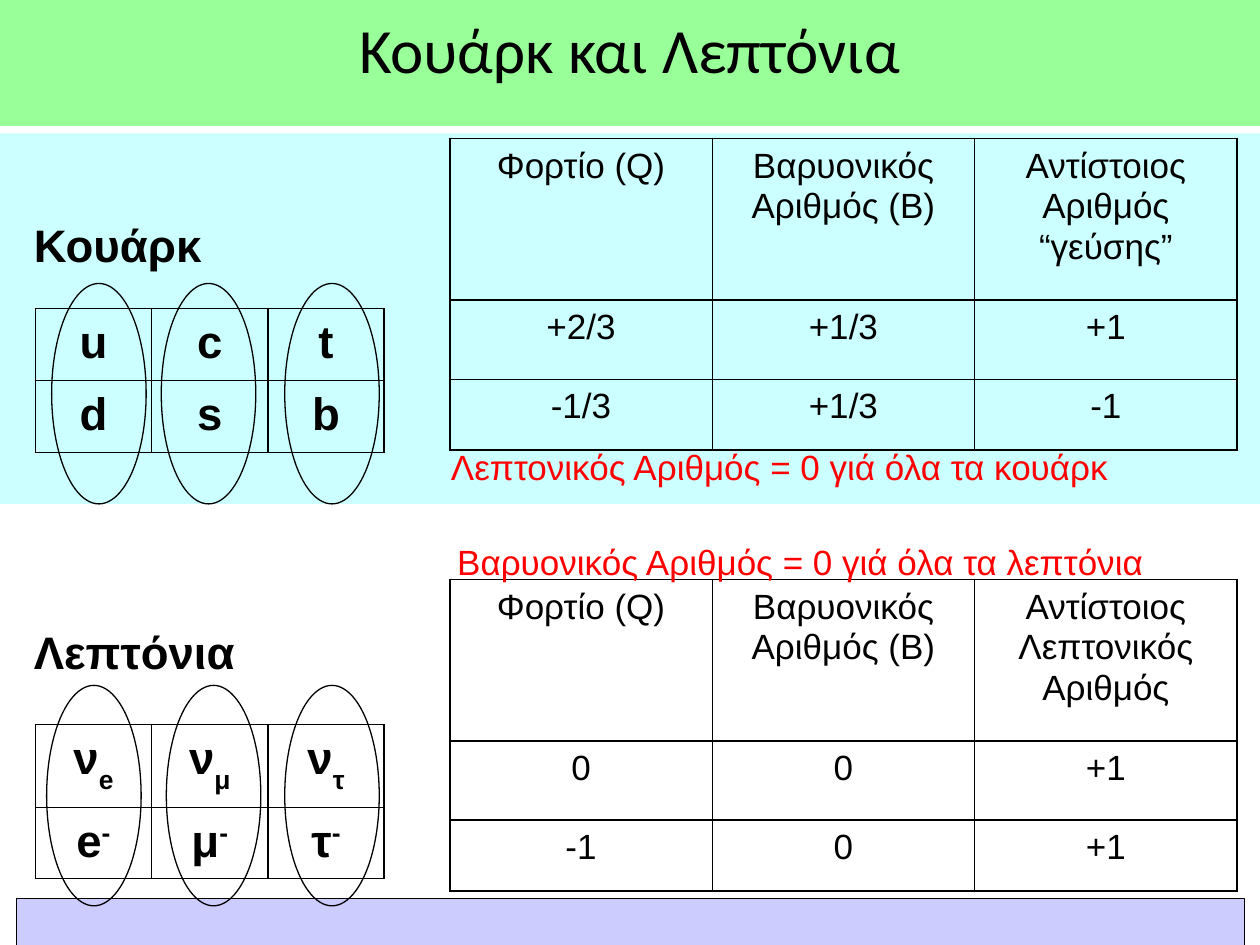
from lxml import etree
from pptx import Presentation
from pptx.dml.color import RGBColor
from pptx.enum.shapes import MSO_SHAPE
from pptx.enum.text import MSO_ANCHOR, MSO_AUTO_SIZE, PP_ALIGN
from pptx.oxml.ns import qn
from pptx.util import Inches, Pt

RECTANGLE, ELLIPSE = MSO_SHAPE.RECTANGLE, MSO_SHAPE.OVAL
CENTER, LEFT, TOP = PP_ALIGN.CENTER, PP_ALIGN.LEFT, MSO_ANCHOR.TOP
NO_AUTOFIT = MSO_AUTO_SIZE.NONE
TITLE_ONLY = 5

SLIDE_W, SLIDE_H = Inches(10), Inches(7.5)
BLACK, RED = "000000", "FF0000"
GREEN, CYAN, LAVENDER = "99FF99", "CCFFFF", "CCCCFF"

TITLE_FONT = {"name": "Calibri", "size": Pt(36), "bold": False}
HEADING_FONT = {"name": "Arial", "size": Pt(26), "bold": True}
BODY_FONT = {"name": "Arial", "size": Pt(20), "bold": False}
BASELINES = {"_": "-33000", "^": "33000"}

# All lengths are percentages of the slide's width or height.
PARTICLE_LEFT, PARTICLE_COLUMNS = 2.8, [9.23] * 3
NUMBER_LEFT, NUMBER_COLUMNS = 35.7, [20.83] * 3
NUMBER_ROWS = [17.07, 8.4, 7.47]
FAMILIES = [
    {
        "heading": "Κουάρκ", "heading_top": 22.27,
        "particles": [["u", "c", "t"], ["d", "s", "b"]],
        "particles_top": 32.67, "particle_rows": [7.6, 7.6],
        "numbers": [["Φορτίο (Q)", "Βαρυονικός Αριθμός (Β)", "Αντίστοιος Αριθμός “γεύσης”"],
                    ["+2/3", "+1/3", "+1"],
                    ["-1/3", "+1/3", "-1"]],
        "numbers_top": 14.67,
        "note": "Λεπτονικός Αριθμός = 0 γιά όλα τα κουάρκ", "note_at": (34.8, 46.53),
        "generations": [4.1, 12.8, 22.6], "generations_top": 30,
    },
    {
        "heading": "Λεπτόνια", "heading_top": 65.33,
        "particles": [["ν_e", "ν_μ", "ν_τ"], ["e^-", "μ^-", "τ^-"]],
        "particles_top": 76.67, "particle_rows": [8.8, 7.47],
        "numbers": [["Φορτίο (Q)", "Βαρυονικός Αριθμός (Β)", "Αντίστοιος Λεπτονικός Αριθμός"],
                    ["0", "0", "+1"],
                    ["-1", "0", "+1"]],
        "numbers_top": 61.33,
        "note": "Βαρυονικός Αριθμός = 0 γιά όλα τα λεπτόνια", "note_at": (35.3, 56.53),
        "generations": [3.7, 13.2, 22.6], "generations_top": 72.53,
    },
]


def color(hex_string):
    return RGBColor.from_string(hex_string)


def across(percent):
    return round(SLIDE_W * percent / 100)


def down(percent):
    return round(SLIDE_H * percent / 100)


def place(left, top, width, height):
    return across(left), down(top), across(width), down(height)


def write(frame, text, font, ink=BLACK, align=LEFT, spacing=1.0):
    """Fill a frame; a character after _ or ^ is lowered or raised."""
    paragraph = frame.paragraphs[0]
    paragraph.alignment, paragraph.line_spacing = align, spacing
    mark = next((m for m in BASELINES if m in text), None)
    for index, part in enumerate(text.split(mark) if mark else [text]):
        run = paragraph.add_run()
        run.text = part
        for attribute, value in font.items():
            setattr(run.font, attribute, value)
        run.font.color.rgb = color(ink)
        if index:
            run._r.get_or_add_rPr().set("baseline", BASELINES[mark])


def add_title(slide, text):
    title = slide.shapes.title
    title.left, title.top, title.width, title.height = place(0, 0, 100, 13.33)
    title.fill.solid()
    title.fill.fore_color.rgb = color(GREEN)
    frame = title.text_frame
    frame.auto_size, frame.vertical_anchor = NO_AUTOFIT, TOP
    frame.margin_top = Inches(0.08)
    write(frame, text, TITLE_FONT, align=CENTER)


def add_outline(slide, kind, box, fill=None, line=None):
    shape = slide.shapes.add_shape(kind, *place(*box))
    shape.shadow.inherit = False
    if fill:
        shape.fill.solid()
        shape.fill.fore_color.rgb = color(fill)
    else:
        shape.fill.background()
    if line:
        shape.line.color.rgb = color(line)
        shape.line.width = Pt(0.75)
    else:
        shape.line.fill.background()


def add_label(slide, text, box, font, ink=BLACK):
    frame = slide.shapes.add_textbox(*place(*box)).text_frame
    frame.word_wrap = True
    write(frame, text, font, ink)


def add_borders(cell):
    properties = cell._tc.get_or_add_tcPr()
    for position, side in enumerate(("a:lnL", "a:lnR", "a:lnT", "a:lnB")):
        border = etree.Element(qn(side), w=str(Pt(1)))
        fill = etree.SubElement(border, qn("a:solidFill"))
        etree.SubElement(fill, qn("a:srgbClr"), val=BLACK)
        properties.insert(position, border)


def add_grid(slide, rows, left, top, widths, heights, font):
    box = place(left, top, sum(widths), sum(heights))
    table = slide.shapes.add_table(len(rows), len(widths), *box).table
    table.first_row = table.horz_banding = False
    for column, width in zip(table.columns, widths):
        column.width = across(width)
    for row, height, texts in zip(table.rows, heights, rows):
        row.height = down(height)
        for cell, text in zip(row.cells, texts):
            cell.fill.background()
            add_borders(cell)
            write(cell.text_frame, text, font, align=CENTER, spacing=1.04)


def add_family(slide, family):
    add_grid(slide, family["particles"], PARTICLE_LEFT, family["particles_top"],
             PARTICLE_COLUMNS, family["particle_rows"], HEADING_FONT)
    add_label(slide, family["heading"], (1.7, family["heading_top"], 23.5, 7.07), HEADING_FONT)
    add_grid(slide, family["numbers"], NUMBER_LEFT, family["numbers_top"],
             NUMBER_COLUMNS, NUMBER_ROWS, BODY_FONT)
    add_label(slide, family["note"], (*family["note_at"], 62.5, 5.73), BODY_FONT, RED)
    for left in family["generations"]:
        add_outline(slide, ELLIPSE, (left, family["generations_top"], 7.5, 23.33), line=BLACK)


def main():
    presentation = Presentation()
    presentation.slide_width, presentation.slide_height = SLIDE_W, SLIDE_H
    slide = presentation.slides.add_slide(presentation.slide_layouts[TITLE_ONLY])
    add_outline(slide, RECTANGLE, (1.3, 95.07, 97.5, 7.2), LAVENDER, BLACK)
    add_outline(slide, RECTANGLE, (0, 14.13, 100, 39.2), CYAN)
    add_title(slide, "Κουάρκ και Λεπτόνια")
    for family in FAMILIES:
        add_family(slide, family)
    presentation.save("out.pptx")


if __name__ == "__main__":
    main()
